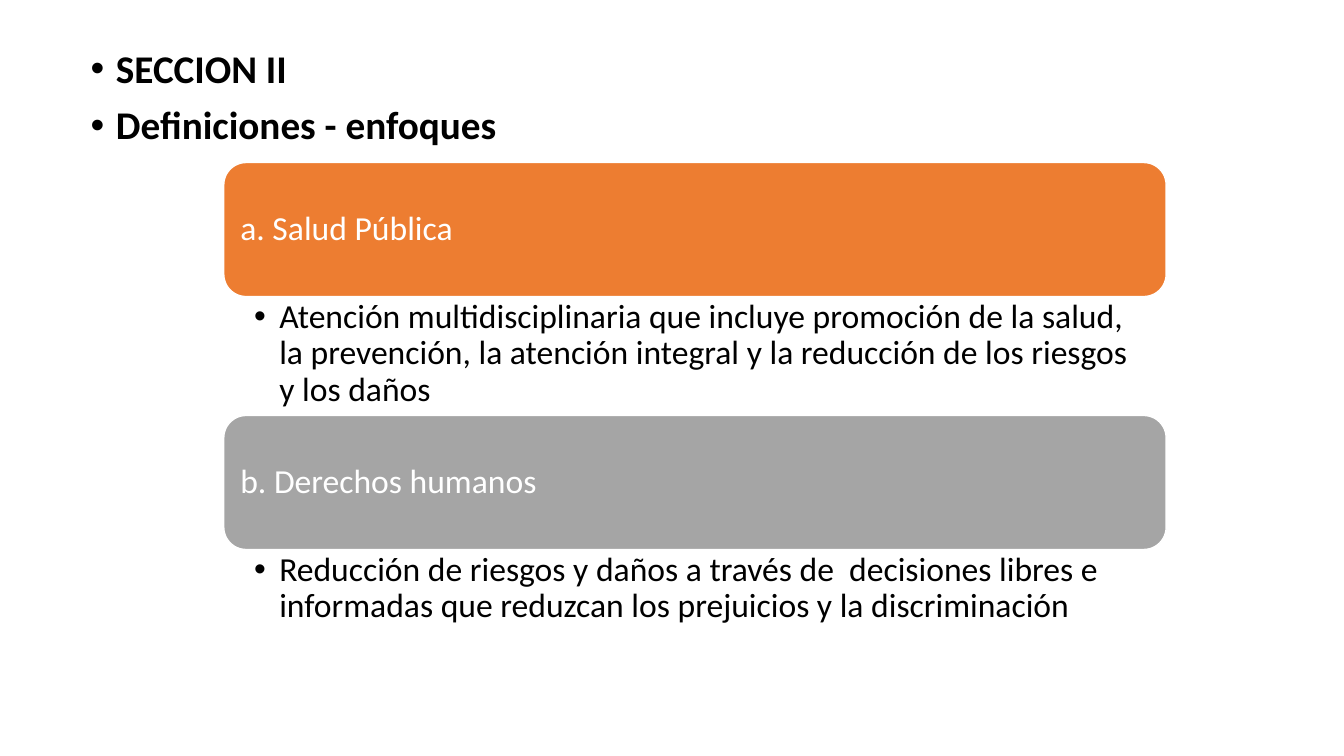
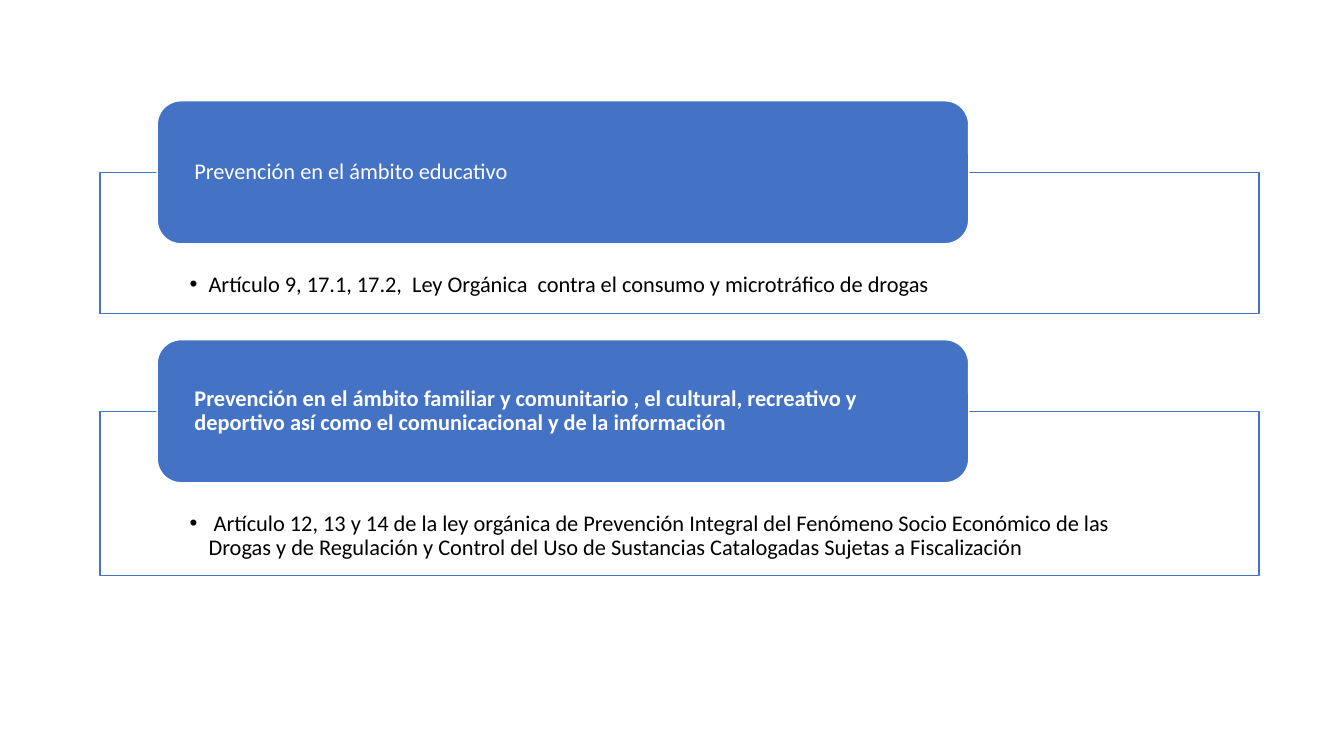
from dataclasses import dataclass

from lxml import etree
from pptx import Presentation
from pptx import util as u
from pptx.dml.color import RGBColor
from pptx.enum import shapes, text
from pptx.oxml.ns import qn


@dataclass(frozen=True)
class Theme:
    font: str = "Calibri"
    ink: str = "000000"
    paper: str = "FFFFFF"
    orange: str = "ED7D31"
    gray: str = "A5A5A5"
    blue: str = "4472C4"
    heading: int = 28
    large: int = 24
    small: int = 16
    leading: float = 0.9
    outline: int = 1


class Builder:
    def __init__(self, theme):
        self.theme = theme
        self.deck = Presentation()
        self.deck.slide_width = u.Inches(13.33)
        self.deck.slide_height = u.Inches(7.5)
        self.page = None

    def across(self, percent):
        return round(self.deck.slide_width * percent / 100)

    def down(self, percent):
        return round(self.deck.slide_height * percent / 100)

    def place(self, area):
        left, top, width, height = area
        return self.across(left), self.down(top), self.across(width), self.down(height)

    def new_page(self):
        self.page = self.deck.slides.add_slide(self.deck.slide_layouts[6])

    def add_lines(self, box, lines, size, color, insets, bold=False, hang=0, before=0,
                  anchor=text.MSO_ANCHOR.TOP):
        frame = box.text_frame
        frame.word_wrap = True
        frame.vertical_anchor = anchor
        left, top, right, bottom = insets
        frame.margin_left, frame.margin_right = self.across(left), self.across(right)
        frame.margin_top, frame.margin_bottom = self.down(top), self.down(bottom)
        for index, line in enumerate(lines):
            para = frame.add_paragraph() if index else frame.paragraphs[0]
            if hang:
                self.bullet(para, self.across(hang))
            para.alignment = text.PP_ALIGN.LEFT
            para.line_spacing = self.theme.leading
            para.space_before = u.Pt(before if index else 0)
            span = para.add_run()
            span.text = line
            span.font.name = self.theme.font
            span.font.size = u.Pt(size)
            span.font.bold = bold
            span.font.color.rgb = RGBColor.from_string(color)

    def bullet(self, para, hang):
        properties = para._p.get_or_add_pPr()
        properties.set("marL", str(hang))
        properties.set("indent", str(-hang))
        etree.SubElement(properties, qn("a:buFont")).set("typeface", "Arial")
        etree.SubElement(properties, qn("a:buChar")).set("char", "•")

    def shape(self, kind, area, fill, line):
        box = self.page.shapes.add_shape(kind, *self.place(area))
        box.shadow.inherit = False
        box.fill.solid()
        box.fill.fore_color.rgb = RGBColor.from_string(fill)
        box.line.color.rgb = RGBColor.from_string(line)
        box.line.width = u.Pt(self.theme.outline)
        return box

    def heading(self, area, lines):
        box = self.page.shapes.add_textbox(*self.place(area))
        self.add_lines(box, lines, self.theme.heading, self.theme.ink,
                       (0.75, 0.67, 0.75, 0.67), bold=True, hang=1.88, before=10)

    def band(self, area, label, fill, size, inset, bold=False):
        box = self.shape(shapes.MSO_SHAPE.ROUNDED_RECTANGLE, area, fill, self.theme.paper)
        self.add_lines(box, [label], size, self.theme.paper, (inset, 0, inset, 0),
                       bold=bold, anchor=text.MSO_ANCHOR.MIDDLE)

    def detail(self, area, line):
        box = self.page.shapes.add_textbox(*self.place(area))
        self.add_lines(box, [line], self.theme.large, self.theme.ink,
                       (2.25, 0.4, 1.42, 0.4), hang=1.88)

    def framed_detail(self, area, line):
        box = self.shape(shapes.MSO_SHAPE.RECTANGLE, area, self.theme.paper, self.theme.blue)
        self.add_lines(box, [line], self.theme.small, self.theme.ink,
                       (6.68, 13.33, 6.68, 1.6), hang=1.41)


def build_approaches(builder):
    theme = builder.theme
    builder.new_page()
    builder.heading((6, 5.87, 86.25, 63.47), ["SECCION II", "Definiciones - enfoques"])
    left, width, band_height, detail_height = 16.65, 70.12, 17.73, 15.73
    approaches = [
        ("a. Salud Pública", theme.orange,
         "Atención multidisciplinaria que incluye promoción de la salud, la prevención, "
         "la atención integral y la reducción de los riesgos y los daños"),
        ("b. Derechos humanos", theme.gray,
         "Reducción de riesgos y daños a través de  decisiones libres e informadas "
         "que reduzcan los prejuicios y la discriminación"),
    ]
    top = 21.5
    for label, fill, line in approaches:
        builder.band((left, top, width, band_height), label, fill, theme.large, 0.75)
        top += band_height
        builder.detail((left, top, width, detail_height), line)
        top += detail_height


def build_prevention(builder):
    theme = builder.theme
    builder.new_page()
    band_height, gap = 18.93, 3.47
    areas = [
        ("Prevención en el ámbito educativo", False, 18.67,
         "Artículo 9, 17.1, 17.2,  Ley Orgánica  contra el consumo y microtráfico de drogas"),
        ("Prevención en el ámbito familiar y comunitario , el cultural, recreativo y "
         "deportivo así como el comunicacional y de la información", True, 21.73,
         " Artículo 12, 13 y 14 de la ley orgánica de Prevención Integral del Fenómeno "
         "Socio Económico de las Drogas y de Regulación y Control del Uso de Sustancias "
         "Catalogadas Sujetas a Fiscalización"),
    ]
    top = 13.33
    for label, bold, frame_height, line in areas:
        frame_top = top + band_height / 2
        builder.framed_detail((7.43, frame_top, 86.25, frame_height), line)
        builder.band((11.7, top, 60.38, band_height), label, theme.blue,
                     theme.small, 2.25, bold)
        top = frame_top + frame_height + gap


def main():
    builder = Builder(Theme())
    build_approaches(builder)
    build_prevention(builder)
    builder.deck.save("out.pptx")


if __name__ == "__main__":
    main()
